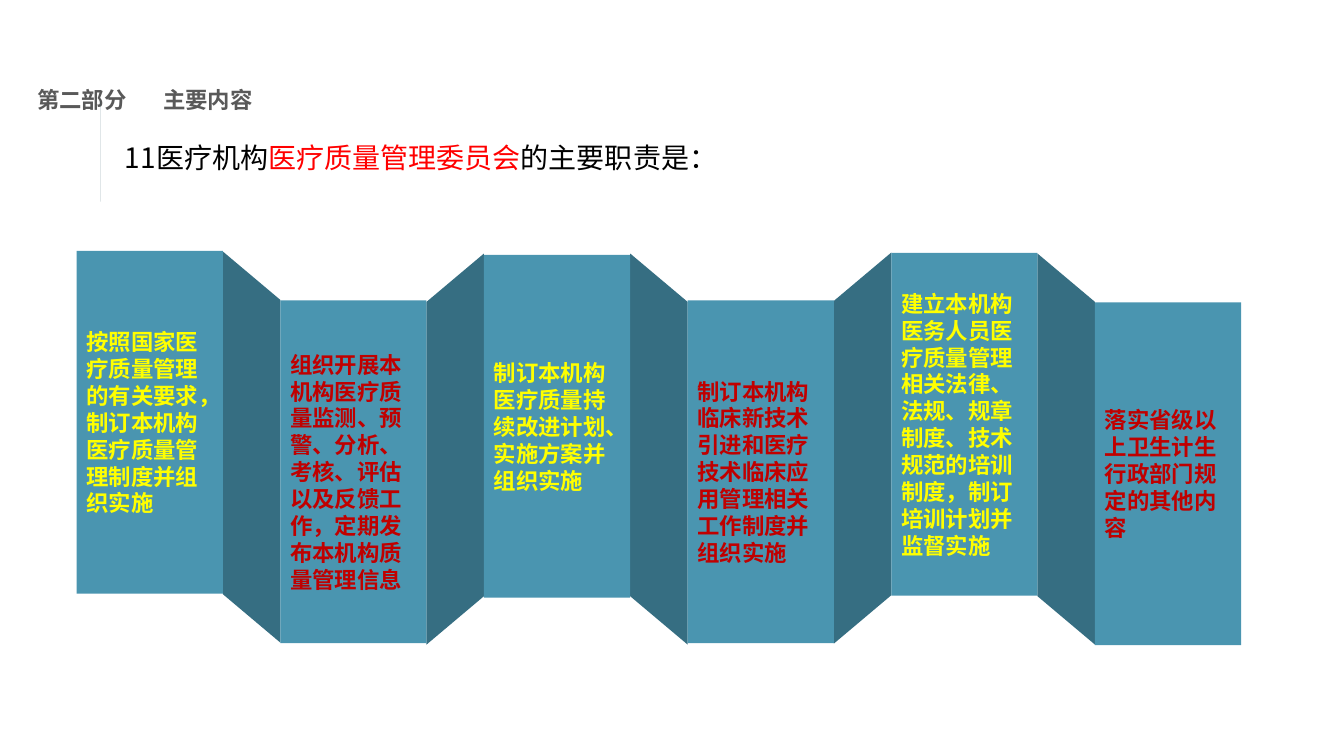
from dataclasses import dataclass
from math import cos, pi, sin

from lxml import etree
from pptx import Presentation
from pptx.dml.color import RGBColor
from pptx.enum.shapes import MSO_SHAPE
from pptx.enum.text import MSO_ANCHOR, MSO_AUTO_SIZE, PP_ALIGN
from pptx.oxml.ns import qn
from pptx.util import Inches, Pt

RECT, SLANT = MSO_SHAPE.RECTANGLE, MSO_SHAPE.PARALLELOGRAM
TOP, MIDDLE = MSO_ANCHOR.TOP, MSO_ANCHOR.MIDDLE
LEFT, FIXED = PP_ALIGN.LEFT, MSO_AUTO_SIZE.NONE


@dataclass(frozen=True)
class Theme:
    font: str = "Noto Sans CJK SC"
    small: int = 16
    large: int = 20
    leading: float = 1.2
    grey: str = "595959"
    black: str = "000000"
    red: str = "FF0000"
    yellow: str = "FFFF00"
    crimson: str = "C00000"
    panel: str = "4A95B0"
    fold: str = "366E82"
    gear: str = "0F3D4C"


THEME = Theme()

# Top edge and wording of each panel
PANELS = [
    (2.49, "按照国家医疗质量管理的有关要求，制订本机构医疗质量管理制度并组织实施"),
    (2.98, "组织开展本机构医疗质量监测、预警、分析、考核、评估以及反馈工作，"
           "定期发布本机构质量管理信息"),
    (2.53, "制订本机构医疗质量持续改进计划、实施方案并组织实施"),
    (2.98, "制订本机构临床新技术引进和医疗技术临床应用管理相关工作制度并组织实施"),
    (2.51, "建立本机构医务人员医疗质量管理相关法律、法规、规章制度、"
           "技术规范的培训制度，制订培训计划并监督实施"),
    (3.0, "落实省级以上卫生计生行政部门规定的其他内容"),
]

GEAR = [
    (1.11, 1.56), (1.16, 1.53), (1.15, 1.48), (1.09, 1.48), (1.07, 1.46),
    (1.07, 1.4), (1.02, 1.39), (0.99, 1.44), (0.96, 1.44), (0.91, 1.42),
    (0.87, 1.46), (0.9, 1.51), (0.89, 1.53), (0.85, 1.56), (0.86, 1.61),
    (0.91, 1.61), (0.93, 1.63), (0.93, 1.69), (0.99, 1.7), (1.02, 1.66),
    (1.04, 1.65), (1.09, 1.68), (1.13, 1.63), (1.11, 1.59),
]
GLINT = [(0.93, 1.53), (0.94, 1.5), (0.97, 1.47), (0.98, 1.47), (0.95, 1.5)]


def write(shape, parts, size, bold=False, anchor=MIDDLE):
    """Fill the shape with one paragraph made of (text, colour) parts."""
    frame = shape.text_frame
    frame.word_wrap = True
    frame.auto_size = FIXED
    frame.vertical_anchor = anchor
    para = frame.paragraphs[0]
    para.alignment = LEFT
    para.line_spacing = Pt(size * THEME.leading)
    for text, color in parts:
        run = para.add_run()
        run.text = text
        font = run.font
        font.name, font.size, font.bold = THEME.font, Pt(size), bold
        font.color.rgb = RGBColor.from_string(color)
        east = etree.SubElement(font._element, qn("a:ea"))
        east.set("typeface", THEME.font)


def paint(shape, color):
    shape.shadow.inherit = False
    shape.fill.solid()
    shape.fill.fore_color.rgb = RGBColor.from_string(color)
    shape.line.fill.background()


def add_header(slide, left, top, height):
    part = slide.shapes.add_textbox(
        Inches(left), Inches(top), Inches(1.12), Inches(height))
    write(part, [("第二部分", THEME.grey)], THEME.small, True)
    title = slide.shapes.title
    title.left, title.top = Inches(left + 1.25), Inches(top)
    title.width, title.height = Inches(3.1), Inches(height)
    write(title, [("主要内容", THEME.grey)], THEME.small, True)


def add_gear(slide):
    hub = [(1 + 0.03 * cos(k * pi / 8), 1.55 + 0.03 * sin(k * pi / 8))
           for k in range(16)]
    first, *rest = GEAR
    form = slide.shapes.build_freeform(*first, scale=Inches(1))
    form.add_line_segments(rest)
    for hole in (hub, GLINT):
        form.move_to(*hole[0])
        form.add_line_segments(hole[1:])
    paint(form.convert_to_shape(), THEME.gear)


def add_topic(slide, left, top, width, height):
    box = slide.shapes.add_textbox(
        Inches(left), Inches(top), Inches(width), Inches(height))
    parts = [("11医疗机构", THEME.black), ("医疗质量管理委员会", THEME.red),
             ("的主要职责是：", THEME.black)]
    write(box, parts, THEME.large, anchor=TOP)
    add_gear(slide)


def add_fold(slide, left, mid, width, height, rise, upward):
    """Draw a slanted strip, turned a quarter, around the height mid."""
    span = height + rise
    fold = slide.shapes.add_shape(
        SLANT, Inches(left + (width - span) / 2), Inches(mid - width / 2),
        Inches(span), Inches(width))
    fold.adjustments[0] = rise / width
    fold.rotation = 90
    if upward:
        fold._element.spPr.xfrm.set("flipV", "1")
    paint(fold, THEME.fold)


def add_screen(slide, left, width, height, gap, rise):
    """Draw the panels from left to right, joined by folds."""
    step = width + gap
    tops = [top for top, _ in PANELS]
    for i, (near, far) in enumerate(zip(tops, tops[1:])):
        mid = (near + far + height) / 2
        add_fold(slide, left + i * step + width, mid, gap, height, rise,
                 far < near)
    for i, (top, text) in enumerate(PANELS):
        panel = slide.shapes.add_shape(
            RECT, Inches(left + i * step), Inches(top),
            Inches(width), Inches(height))
        paint(panel, THEME.panel)
        color = THEME.crimson if i % 2 else THEME.yellow
        write(panel, [(text, color)], THEME.small, True)


def main():
    deck = Presentation()
    deck.slide_width, deck.slide_height = Inches(13.33), Inches(7.5)
    slide = deck.slides.add_slide(deck.slide_layouts.get_by_name("Title Only"))
    add_header(slide, 0.27, 0.8, 0.37)
    add_topic(slide, 1.14, 1.34, 11.43, 0.44)
    add_screen(slide, 0.76, 1.45, 3.4, 0.57, 0.48)
    deck.save("out.pptx")


if __name__ == "__main__":
    main()
